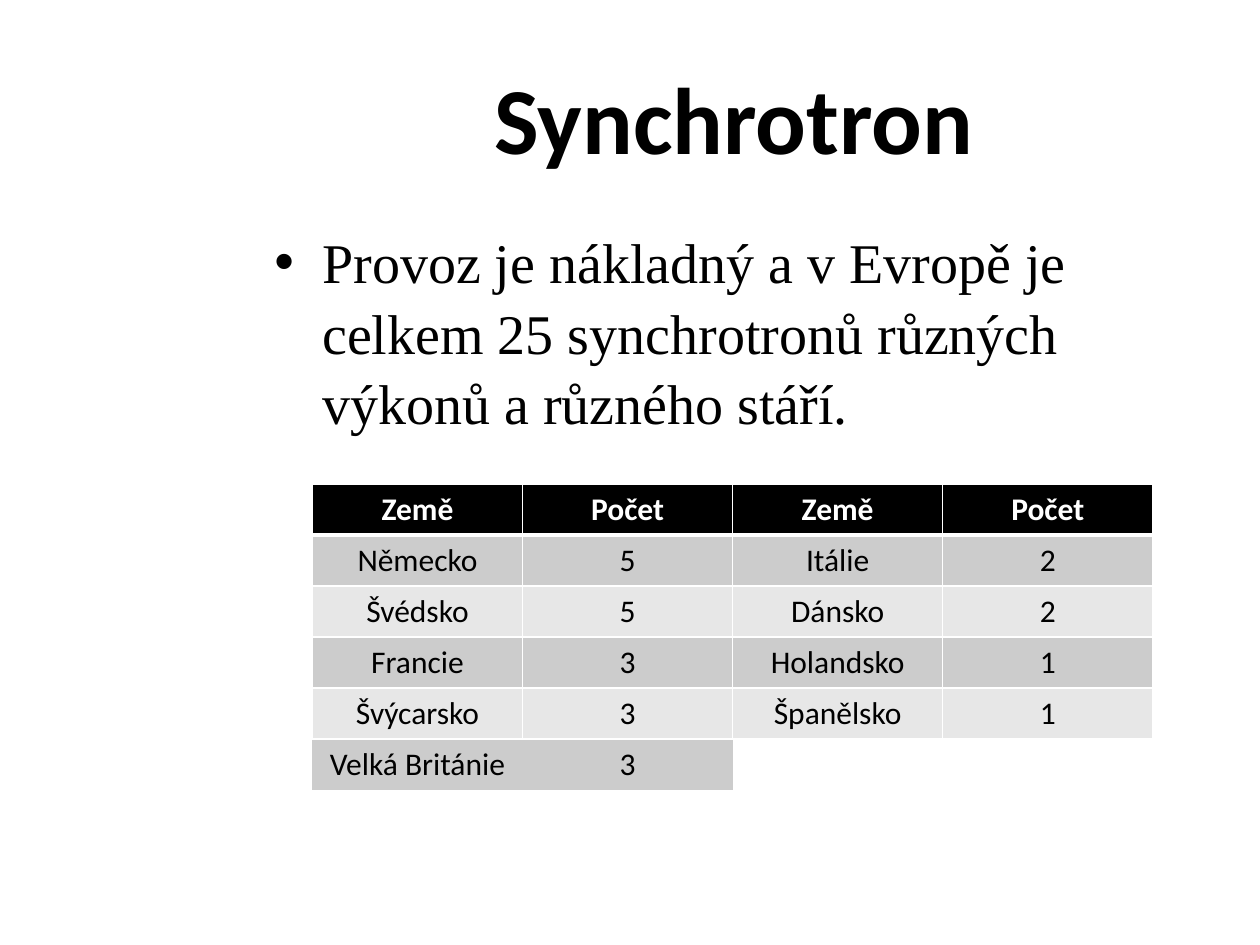
import pptx
import pptx.dml.color
import pptx.enum.text
import pptx.oxml
import pptx.oxml.ns
import pptx.util

WIDTH, HEIGHT = 10, 7.5
COLORS = {"text": "000000", "paper": "FFFFFF", "header": "000000",
          "band_dark": "CCCCCC", "band_light": "E7E7E7"}
FORMATS = {
    "title": {"name": "Calibri", "size": 54, "bold": True, "color": "text"},
    "body": {"name": "Times New Roman", "size": 32, "bold": False, "color": "text"},
    "header": {"name": "Calibri", "size": 18, "bold": True, "color": "paper"},
    "cell": {"name": "Calibri", "size": 18, "bold": False, "color": "text"},
}
NO_STYLE = "{2D5ABB26-0587-4C30-8999-92F81FD0307C}"
COUNTRIES = [
    ("Země", "Počet", "Země", "Počet"),
    ("Německo", "5", "Itálie", "2"),
    ("Švédsko", "5", "Dánsko", "2"),
    ("Francie", "3", "Holandsko", "1"),
    ("Švýcarsko", "3", "Španělsko", "1"),
    ("Velká Británie", "3", "", ""),
]


def rgb(name):
    return pptx.dml.color.RGBColor.from_string(COLORS[name])


def share_box(left, top, width, height):
    """Turn shares of the slide's size into lengths."""
    return [pptx.util.Inches(share * full) for share, full in
            ((left, WIDTH), (top, HEIGHT), (width, WIDTH), (height, HEIGHT))]


def write(paragraph, text, style, alignment):
    paragraph.alignment = alignment
    run = paragraph.add_run()
    run.text = text
    for attribute, value in FORMATS[style].items():
        if attribute == "color":
            run.font.color.rgb = rgb(value)
        else:
            setattr(run.font, attribute, pptx.util.Pt(value) if attribute == "size" else value)


def place_title(slide, box, text):
    title = slide.shapes.title
    title.left, title.top, title.width, title.height = box
    title.text_frame.vertical_anchor = pptx.enum.text.MSO_ANCHOR.MIDDLE
    write(title.text_frame.paragraphs[0], text, "title", pptx.enum.text.PP_ALIGN.CENTER)


def place_bullet(slide, box, text):
    frame = slide.shapes.add_textbox(*box).text_frame
    frame.word_wrap = True
    frame.margin_top = pptx.util.Inches(0.08)
    paragraph = frame.paragraphs[0]
    paragraph.line_spacing = 1.05
    properties = paragraph._p.get_or_add_pPr()
    indent = pptx.util.Inches(0.38)
    properties.set("marL", str(indent))
    properties.set("indent", str(-indent))
    namespace = pptx.oxml.ns.nsdecls("a")
    for element in (f'<a:buFont {namespace} typeface="Arial"/>',
                    f'<a:buChar {namespace} char="•"/>'):
        properties.append(pptx.oxml.parse_xml(element))
    write(paragraph, text, "body", pptx.enum.text.PP_ALIGN.LEFT)


def add_borders(cell, widths):
    """Draw white borders; widths maps a side (L, R, T, B) to points."""
    for side, points in widths.items():
        cell._tc.get_or_add_tcPr().append(pptx.oxml.parse_xml(
            f'<a:ln{side} {pptx.oxml.ns.nsdecls("a")} w="{pptx.util.Pt(points)}">'
            f'<a:solidFill><a:srgbClr val="{COLORS["paper"]}"/></a:solidFill></a:ln{side}>'))


def format_cell(cell, text, row, column, last_row):
    if row < last_row:
        widths = {"L": 1, "R": 1, "T": 3 if row == 1 else 1, "B": 3 if row == 0 else 1}
        if row == last_row - 1 and column < 2:
            del widths["B"]
        add_borders(cell, widths)
    cell.vertical_anchor = pptx.enum.text.MSO_ANCHOR.MIDDLE
    if not text:
        cell.fill.background()
        return
    cell.fill.solid()
    band = "band_dark" if row % 2 else "band_light"
    cell.fill.fore_color.rgb = rgb("header" if row == 0 else band)
    write(cell.text_frame.paragraphs[0], text, "cell" if row else "header",
          pptx.enum.text.PP_ALIGN.CENTER)


def place_table(slide, box, rows):
    table = slide.shapes.add_table(len(rows), len(rows[0]), *box).table
    table._tbl.tblPr.find(pptx.oxml.ns.qn("a:tableStyleId")).text = NO_STYLE
    table.horz_banding = False
    for row, texts in enumerate(rows):
        for column, text in enumerate(texts):
            format_cell(table.cell(row, column), text, row, column, len(rows) - 1)


def build_synchrotron_slide(presentation):
    slide = presentation.slides.add_slide(presentation.slide_layouts[5])
    place_title(slide, share_box(0.208, 0.04, 0.766, 0.167), "Synchrotron ")
    place_bullet(slide, share_box(0.208, 0.227, 0.767, 0.683),
                 "Provoz je nákladný a v Evropě je celkem 25 synchrotronů "
                 "různých výkonů a různého stáří.")
    place_table(slide, share_box(0.248, 0.512, 0.667, 0.324), COUNTRIES)


def main():
    presentation = pptx.Presentation()
    presentation.slide_width = pptx.util.Inches(WIDTH)
    presentation.slide_height = pptx.util.Inches(HEIGHT)
    build_synchrotron_slide(presentation)
    presentation.save("out.pptx")


if __name__ == "__main__":
    main()
